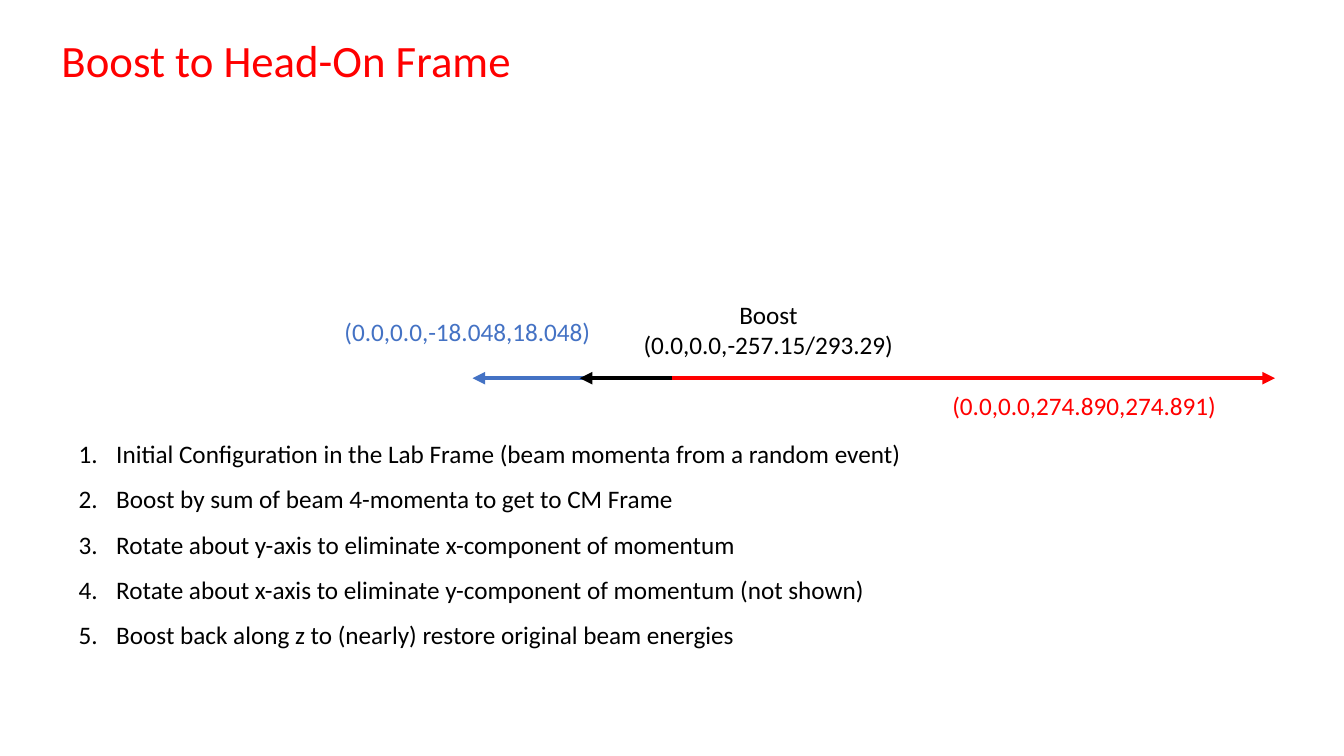
from dataclasses import dataclass

from lxml import etree
from pptx import Presentation
from pptx.dml.color import RGBColor
from pptx.enum.shapes import MSO_CONNECTOR
from pptx.enum.text import MSO_AUTO_SIZE, PP_ALIGN
from pptx.oxml.ns import qn
from pptx.util import Cm, Pt

STRAIGHT = MSO_CONNECTOR.STRAIGHT
LEFT, CENTER = PP_ALIGN.LEFT, PP_ALIGN.CENTER
GROW = MSO_AUTO_SIZE.SHAPE_TO_FIT_TEXT


@dataclass(frozen=True)
class Theme:
    font: str = "Calibri"
    title_size: int = 32
    body_size: int = 18
    arrow_width: int = 3
    red: str = "FF0000"
    blue: str = "4472C4"
    black: str = "000000"


THEME = Theme()

# Lengths in cm; boxes are left, top, width, height
TITLE = "Boost to Head-On Frame"
TITLE_BOX = (1.3, 0.71, 23.34, 1.62)

STEPS = [
    "Initial Configuration in the Lab Frame (beam momenta from a random event)",
    "Boost by sum of beam 4-momenta to get to CM Frame",
    "Rotate about y-axis to eliminate x-component of momentum",
    "Rotate about x-axis to eliminate y-component of momentum (not shown)",
    "Boost back along z to (nearly) restore original beam energies",
]
STEPS_BOX = (1.73, 10.54, 23.24, 5.92)
STEP_INDENT = 0.95

ORIGIN = (16.93, 9.53)
VECTORS = [  # tip x, colour, label lines, label box, label alignment
    (11.91, THEME.blue, ["(0.0,0.0,-18.048,18.048)"],
     (8.43, 7.85, 8.48, 1.03), LEFT),
    (32.13, THEME.red, ["(0.0,0.0,274.890,274.891)"],
     (23.75, 9.7, 8.48, 1.03), LEFT),
    (14.61, THEME.black, ["Boost", "(0.0,0.0,-257.15/293.29)"],
     (12.9, 7.42, 12.93, 1.8), CENTER),
]


def add_text(slide, lines, box, color=THEME.black, size=THEME.body_size,
             align=LEFT, spacing=None, numbered=False):
    frame = slide.shapes.add_textbox(*map(Cm, box)).text_frame
    frame.word_wrap = True
    frame.auto_size = GROW
    frame.text = "\n".join(lines)
    for paragraph in frame.paragraphs:
        paragraph.alignment = align
        paragraph.line_spacing = spacing
        font = paragraph.runs[0].font
        font.name = THEME.font
        font.size = Pt(size)
        font.color.rgb = RGBColor.from_string(color)
        if numbered:
            number_paragraph(paragraph)


def number_paragraph(paragraph):
    properties = paragraph._p.get_or_add_pPr()
    properties.set("marL", str(Cm(STEP_INDENT)))
    properties.set("indent", str(-Cm(STEP_INDENT)))
    etree.SubElement(properties, qn("a:buFont"), typeface="+mj-lt")
    etree.SubElement(properties, qn("a:buAutoNum"), type="arabicPeriod")


def add_vector(slide, tip_x, color):
    """Draw a horizontal arrow from the origin to tip_x."""
    x, y = ORIGIN
    arrow = slide.shapes.add_connector(STRAIGHT, Cm(x), Cm(y), Cm(tip_x), Cm(y))
    arrow.line.width = Pt(THEME.arrow_width)
    arrow.line.color.rgb = RGBColor.from_string(color)
    etree.SubElement(arrow.line._get_or_add_ln(), qn("a:tailEnd"), type="triangle")
    etree.SubElement(arrow._element.spPr, qn("a:effectLst"))


def main():
    deck = Presentation()
    deck.slide_width, deck.slide_height = Cm(33.87), Cm(19.05)
    slide = deck.slides.add_slide(deck.slide_layouts[6])

    add_text(slide, [TITLE], TITLE_BOX, color=THEME.red, size=THEME.title_size)
    for tip_x, color, label, box, align in VECTORS:
        add_vector(slide, tip_x, color)
        add_text(slide, label, box, color=color, align=align)
    add_text(slide, STEPS, STEPS_BOX, spacing=1.5, numbered=True)

    deck.save("out.pptx")


if __name__ == "__main__":
    main()
